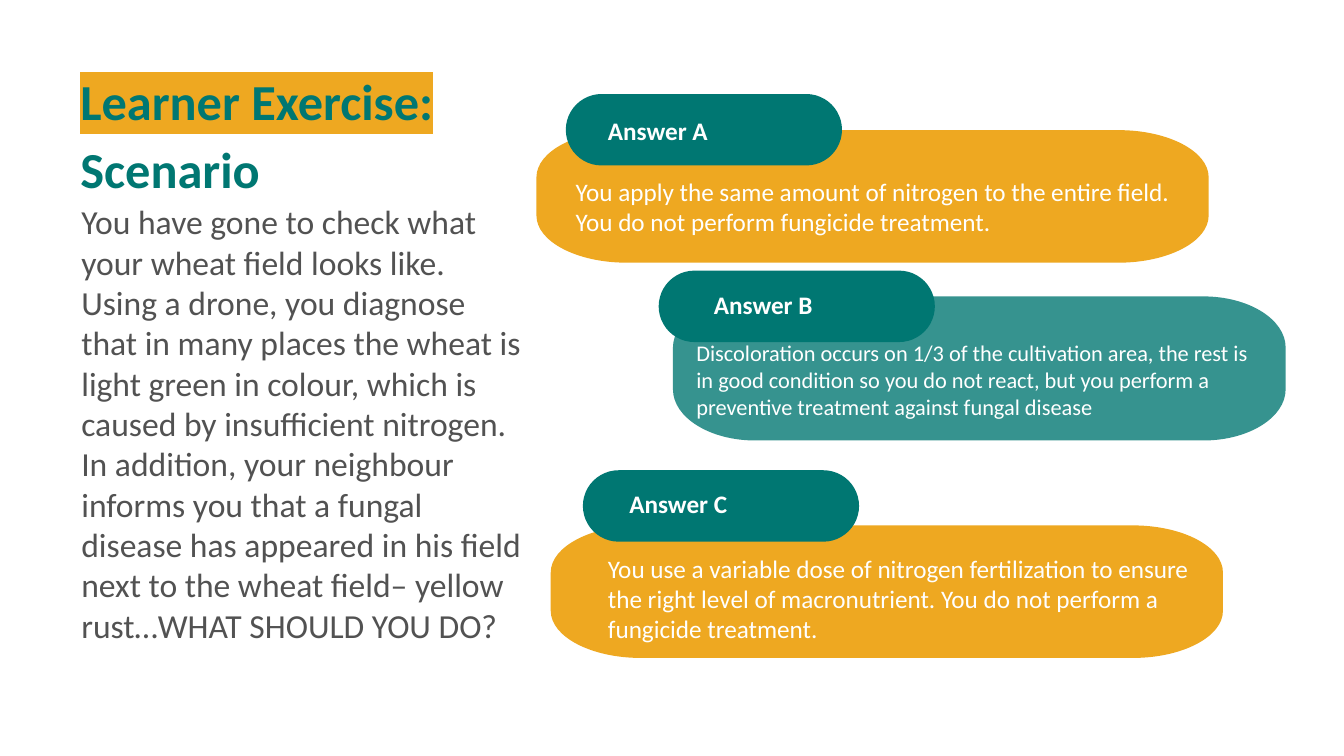
from dataclasses import dataclass

from lxml.etree import SubElement
from pptx import Presentation
from pptx.dml.color import RGBColor
from pptx.enum.shapes import MSO_SHAPE
from pptx.enum.text import MSO_ANCHOR, MSO_AUTO_SIZE, PP_ALIGN
from pptx.oxml import parse_xml
from pptx.oxml.ns import nsdecls, qn
from pptx.shapes.autoshape import Shape
from pptx.shapes.shapetree import SlideShapes
from pptx.util import Cm, Pt

COLORS = {"teal": "007772", "amber": "EEA821", "white": "FFFFFF", "gray": "525252"}
FONT = "Calibri"
TAG_SIZE = (6.96, 1.8)
LABEL_HEIGHT = 1.02
CORNER_X, CORNER_Y = 0.134, 0.355  # corner radii as shares of width and height
BEND = 0.55  # handle length of a quarter ellipse, as a share of its radius


@dataclass(frozen=True)
class Box:
    left: float
    top: float
    width: float
    height: float

    def lengths(self) -> tuple[Cm, Cm, Cm, Cm]:
        return Cm(self.left), Cm(self.top), Cm(self.width), Cm(self.height)


@dataclass(frozen=True)
class Answer:
    name: str
    text: str
    size: int
    color: str
    opacity: int
    panel: Box
    tag: Box
    label: Box
    body: Box


ANSWERS = [
    Answer("Answer A",
           "You apply the same amount of nitrogen to the entire field. "
           "You do not perform fungicide treatment.",
           18, "amber", 100,
           Box(13.52, 3.28, 16.94, 3.34), Box(14.26, 2.37, *TAG_SIZE),
           Box(15.07, 2.79, 4.19, LABEL_HEIGHT), Box(14.26, 4.32, 15.54, 1.8)),
    Answer("Answer B",
           "Discoloration occurs on 1/3 of the cultivation area, the rest is in good "
           "condition so you do not react, but you perform a preventive treatment "
           "against fungal disease",
           16, "teal", 79,
           Box(16.96, 7.47, 15.44, 3.63), Box(16.6, 6.82, *TAG_SIZE),
           Box(17.74, 7.16, 5.11, LABEL_HEIGHT), Box(17.3, 8.42, 14.78, 2.31)),
    Answer("Answer C",
           "You use a variable dose of nitrogen fertilization to ensure the right level "
           "of macronutrient. You do not perform a fungicide treatment.",
           18, "amber", 100,
           Box(13.88, 13.24, 16.94, 3.34), Box(14.69, 11.85, *TAG_SIZE),
           Box(15.61, 12.19, 4.52, LABEL_HEIGHT), Box(15.07, 13.81, 15.54, 2.57)),
]

SCENARIO = (
    "You have gone to check what your wheat field looks like. Using a drone, you "
    "diagnose that in many places the wheat is light green in colour, which is caused "
    "by insufficient nitrogen. In addition, your neighbour informs you that a fungal "
    "disease has appeared in his field next to the wheat field– yellow rust…WHAT "
    "SHOULD YOU DO?"
)


def paint(shape: Shape, color: str, opacity: int = 100) -> None:
    shape.shadow.inherit = False
    shape.line.fill.background()
    shape.fill.solid()
    shape.fill.fore_color.rgb = RGBColor.from_string(COLORS[color])
    if opacity < 100:
        tint = shape.fill._xPr.find(qn("a:solidFill"))[0]
        SubElement(tint, qn("a:alpha"), val=str(opacity * 1000))


def style(shape: Shape, size: int, color: str, bold: bool = False) -> None:
    for para in shape.text_frame.paragraphs:
        for run in para.runs:
            run.font.name = FONT
            run.font.size = Pt(size)
            run.font.bold = bold
            run.font.color.rgb = RGBColor.from_string(COLORS[color])


def round_corners(panel: Shape, width: int, height: int) -> None:
    """Turn every second edge of the outline into a quarter ellipse."""
    edges = list(panel._element.iter(qn("a:moveTo"), qn("a:lnTo")))
    ends = [(int(edge[0].get("x")), int(edge[0].get("y"))) for edge in edges]
    corners = [(0, height), (0, 0), (width, 0), (width, height)]
    for index, corner in enumerate(corners):
        spot = 2 * index + 2
        start, end = ends[spot - 1], ends[spot]
        handles = [tuple(round(p + BEND * (c - p)) for p, c in zip(point, corner))
                   for point in (start, end)]
        edge = edges[spot]
        edge.tag = qn("a:cubicBezTo")
        edge.remove(edge[0])
        for x, y in (*handles, end):
            SubElement(edge, qn("a:pt"), x=str(x), y=str(y))


def add_panel(shapes: SlideShapes, box: Box, color: str, opacity: int) -> None:
    """Draw a panel whose corners are quarter ellipses."""
    left, top, width, height = box.lengths()
    right, bottom = left + width, top + height
    rad_x, rad_y = round(width * CORNER_X), round(height * CORNER_Y)
    start = (right - rad_x, bottom)
    builder = shapes.build_freeform(*start)
    builder.add_line_segments([
        (left + rad_x, bottom), (left, bottom - rad_y),
        (left, top + rad_y), (left + rad_x, top),
        (right - rad_x, top), (right, top + rad_y),
        (right, bottom - rad_y), start,
    ], close=True)
    panel = builder.convert_to_shape()
    round_corners(panel, width, height)
    paint(panel, color, opacity)


def add_tag(shapes: SlideShapes, box: Box) -> None:
    tag = shapes.add_shape(MSO_SHAPE.ROUNDED_RECTANGLE, *box.lengths())
    tag.adjustments[0] = 0.5
    paint(tag, "teal")


def add_text(shapes: SlideShapes, box: Box, text: str, size: int,
             color: str, bold: bool = False) -> None:
    label = shapes.add_textbox(*box.lengths())
    label.text_frame.word_wrap = True
    label.text_frame.text = text
    style(label, size, color, bold)


def set_title(title: Shape) -> None:
    title.left, title.top, title.width, title.height = Box(1.77, 1.8, 11.68, 2.24).lengths()
    frame = title.text_frame
    frame.text = "Learner Exercise:\nScenario"
    frame.auto_size = MSO_AUTO_SIZE.NONE
    frame.vertical_anchor = MSO_ANCHOR.TOP
    frame.word_wrap = True
    style(title, 36, "teal", True)
    for para in frame.paragraphs:
        para.alignment = PP_ALIGN.LEFT
        para.line_spacing = 0.9
    first, second = frame.paragraphs
    first.space_before = Pt(0)
    second.space_before = Pt(10)
    mark = parse_xml(f'<a:highlight {nsdecls("a")}>'
                     f'<a:srgbClr val="{COLORS["amber"]}"/></a:highlight>')
    first.runs[0].font._element.find(qn("a:solidFill")).addnext(mark)


def main() -> None:
    deck = Presentation()
    deck.slide_width, deck.slide_height = Cm(33.87), Cm(19.05)
    shapes = deck.slides.add_slide(deck.slide_layouts[5]).shapes
    set_title(shapes.title)
    add_text(shapes, Box(1.8, 4.95, 11.73, 11.53), SCENARIO, 24, "gray")
    for item in ANSWERS:
        add_panel(shapes, item.panel, item.color, item.opacity)
        add_tag(shapes, item.tag)
        add_text(shapes, item.label, item.name, 18, "white", True)
        add_text(shapes, item.body, item.text, item.size, "white")
    deck.save("out.pptx")


if __name__ == "__main__":
    main()
